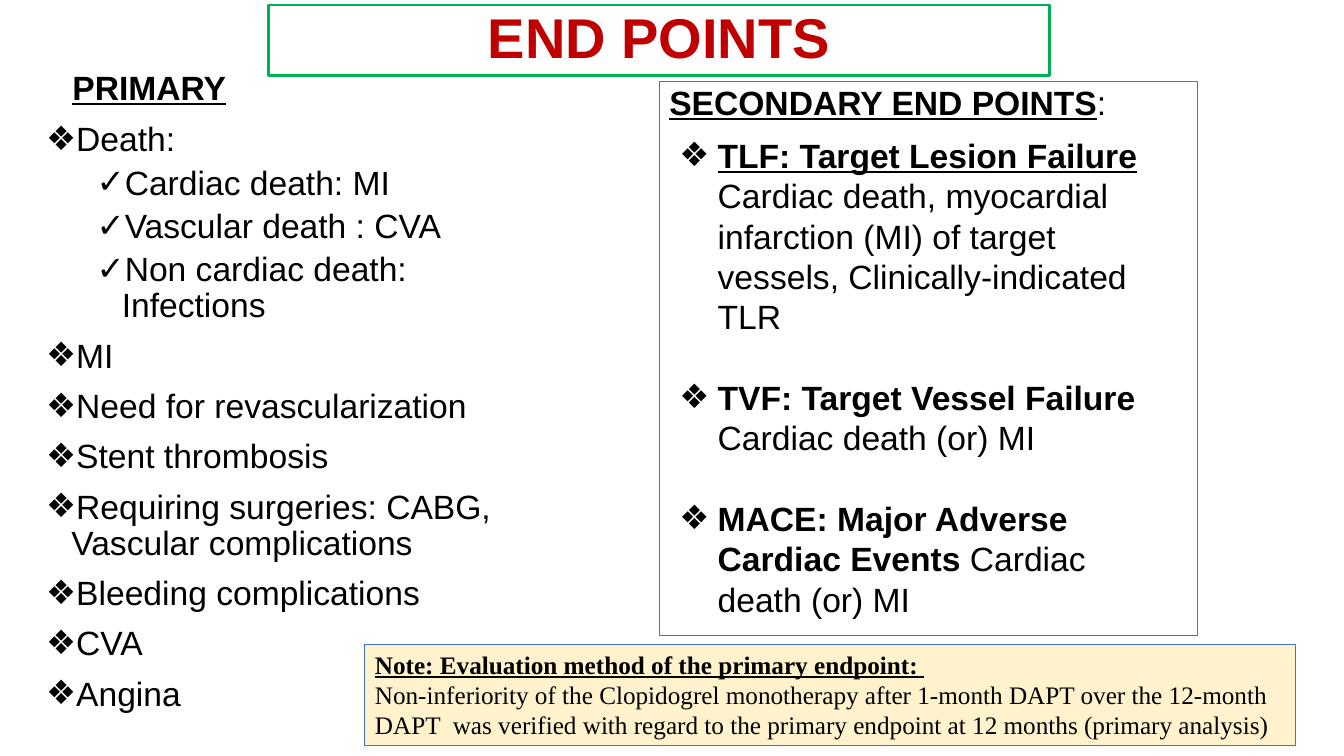
"""Builds the END POINTS slide with primary and secondary study end points."""
from lxml import etree
from pptx import Presentation
from pptx.dml.color import RGBColor
from pptx.enum.shapes import MSO_SHAPE
from pptx.enum.text import MSO_ANCHOR, MSO_AUTO_SIZE, PP_ALIGN
from pptx.oxml.ns import qn
from pptx.util import Inches, Pt

RECT = MSO_SHAPE.RECTANGLE
TOP, MIDDLE = MSO_ANCHOR.TOP, MSO_ANCHOR.MIDDLE
GROW = MSO_AUTO_SIZE.SHAPE_TO_FIT_TEXT
LEFT, CENTER = PP_ALIGN.LEFT, PP_ALIGN.CENTER

BLACK = RGBColor(0x00, 0x00, 0x00)
RED = RGBColor(0xC0, 0x00, 0x00)
GREEN = RGBColor(0x00, 0xB0, 0x50)
BLUE = RGBColor(0x44, 0x72, 0xC4)
CREAM = RGBColor(0xFF, 0xF2, 0xCC)

DIAMOND, CHECK = "❖", "✓"

PRIMARY = [
    (0, "Death:"),
    (1, "Cardiac death: MI"),
    (1, "Vascular death : CVA"),
    (1, "Non cardiac death: Infections"),
    (0, "MI"),
    (0, "Need for revascularization"),
    (0, "Stent thrombosis"),
    (0, "Requiring surgeries: CABG, Vascular complications"),
    (0, "Bleeding complications"),
    (0, "CVA"),
    (0, "Angina"),
]

SECONDARY = [
    ("TLF: Target Lesion Failure", True, True,
     "Cardiac death, myocardial infarction (MI) of target vessels, "
     "Clinically-indicated TLR"),
    ("TVF: Target Vessel Failure", False, True, "Cardiac death (or) MI"),
    ("MACE: Major Adverse Cardiac Events ", False, False,
     "Cardiac death (or) MI"),
]

NOTE_HEAD = "Note: Evaluation method of the primary endpoint: "
NOTE_TEXT = ("Non-inferiority of the Clopidogrel monotherapy after 1-month DAPT "
             "over the 12-month DAPT  was verified with regard to the primary "
             "endpoint at 12 months (primary analysis)")


def add_box(s, at, line, width, fill=None, anchor=TOP):
    """Add an outlined rectangle and return its text frame."""
    sp = s.shapes.add_shape(RECT, *map(Inches, at))
    sp.shadow.inherit = False
    sp.line.color.rgb = line
    sp.line.width = Pt(width)
    if fill is None:
        sp.fill.background()
    else:
        sp.fill.solid()
        sp.fill.fore_color.rgb = fill
    tf = sp.text_frame
    tf.word_wrap = True
    tf.vertical_anchor = anchor
    return tf


def add_text(s, at, wrap=True):
    """Add a text box and return its text frame."""
    tf = s.shapes.add_textbox(*map(Inches, at)).text_frame
    tf.word_wrap = wrap
    return tf


def add_paragraph(tf, first, align=LEFT, spacing=None, before=0):
    """Return the first or a new paragraph with its spacing set."""
    p = tf.paragraphs[0] if first else tf.add_paragraph()
    p.alignment = align
    p.space_before = Pt(before)
    if spacing:
        p.line_spacing = spacing
    return p


def add_run(p, text, size=24, font="Arial", color=BLACK, bold=False,
            underline=False):
    """Add a formatted run to a paragraph."""
    r = p.add_run()
    r.text = text
    r.font.size = Pt(size)
    r.font.name = font
    r.font.color.rgb = color
    r.font.bold = bold
    r.font.underline = underline


def set_bullet(p, char, margin, hanging):
    """Give a paragraph a bullet and a hanging indent."""
    pPr = p._p.get_or_add_pPr()
    pPr.set("marL", str(Inches(margin)))
    pPr.set("indent", str(-Inches(hanging)))
    etree.SubElement(pPr, qn("a:buFont")).set("typeface", "Arial")
    etree.SubElement(pPr, qn("a:buChar")).set("char", char)


def add_title(s):
    """Add the framed slide title."""
    tf = add_box(s, (2.66, 0.05, 7.75, 0.7), GREEN, 2, anchor=MIDDLE)
    p = add_paragraph(tf, True, CENTER, 0.9)
    add_run(p, "END POINTS", size=40, color=RED, bold=True)


def add_primary(s):
    """Add the primary end points with their heading."""
    tf = add_text(s, (0.36, 1.17, 5.17, 6.17))
    for i, (level, text) in enumerate(PRIMARY):
        p = add_paragraph(tf, i == 0, spacing=0.9, before=5 if level else 10)
        p.level = level
        set_bullet(p, CHECK if level else DIAMOND, 0.25 + 0.5 * level, 0.25)
        add_run(p, text)
    tf = add_text(s, (0.62, 0.61, 1.73, 0.5), wrap=False)
    tf.auto_size = GROW
    add_run(add_paragraph(tf, True), "PRIMARY", bold=True, underline=True)


def add_secondary(s):
    """Add the framed secondary end points."""
    tf = add_box(s, (6.54, 0.81, 5.34, 5.5), BLUE, 0.75)
    p = add_paragraph(tf, True, spacing=0.9, before=10)
    add_run(p, "SECONDARY END POINTS", bold=True, underline=True)
    add_run(p, ":")
    tf = add_text(s, (6.64, 1.29, 4.9, 4.95))
    tf.auto_size = GROW
    for i, (term, underline, broken, meaning) in enumerate(SECONDARY):
        p = add_paragraph(tf, i == 0, before=28.8 if i else 0)
        set_bullet(p, DIAMOND, 0.38, 0.38)
        add_run(p, term, bold=True, underline=underline)
        if broken:
            p.add_line_break()
        add_run(p, meaning)


def add_note(s):
    """Add the note on the evaluation method."""
    tf = add_box(s, (3.62, 6.39, 9.23, 1.01), BLUE, 0.75, fill=CREAM)
    tf.auto_size = GROW
    p = add_paragraph(tf, True)
    style = {"size": 18, "font": "Times New Roman"}
    add_run(p, NOTE_HEAD, bold=True, underline=True, **style)
    p.add_line_break()
    add_run(p, NOTE_TEXT, **style)


def main():
    """Build and save the slide."""
    prs = Presentation()
    prs.slide_width = Inches(13.33)
    prs.slide_height = Inches(7.5)
    s = prs.slides.add_slide(prs.slide_layouts[6])
    add_title(s)
    add_primary(s)
    add_secondary(s)
    add_note(s)
    prs.save("out.pptx")


if __name__ == "__main__":
    main()
